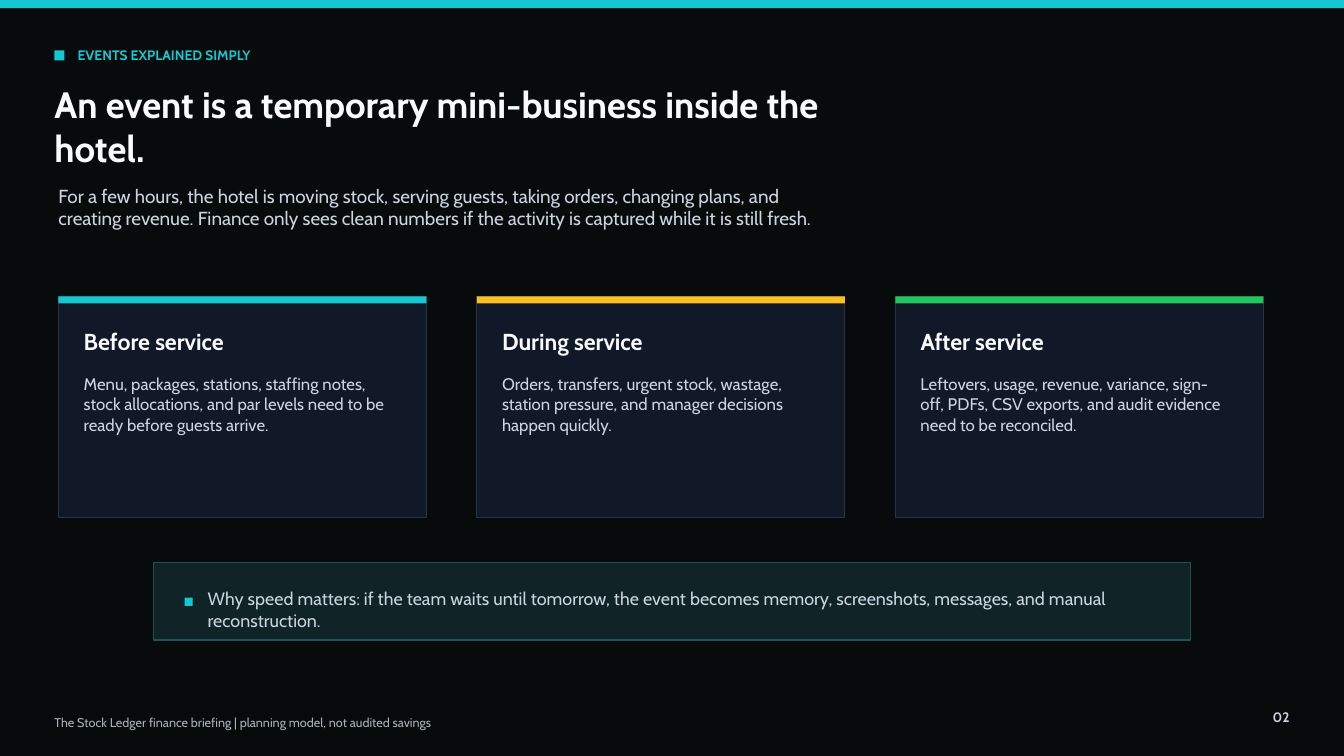
from dataclasses import dataclass

from pptx import Presentation
from pptx.dml.color import RGBColor
from pptx.enum.shapes import MSO_SHAPE
from pptx.enum.text import MSO_ANCHOR, MSO_AUTO_SIZE, PP_ALIGN
from pptx.util import Inches, Pt


@dataclass(frozen=True)
class Theme:
    font: str = "Cabin"
    page: str = "080B0B"
    footer: str = "070A0A"
    card: str = "111827"
    card_edge: str = "273443"
    callout: str = "102326"
    callout_edge: str = "1E5257"
    cyan: str = "17C7CF"
    amber: str = "FBBF24"
    green: str = "22C55E"
    white: str = "F8FAFC"
    soft: str = "CBD5E1"
    muted: str = "A7B2BF"
    title_size: float = 26.2
    heading_size: float = 16.5
    lead_size: float = 13.5
    callout_size: float = 12.8
    body_size: float = 12
    label_size: float = 9.8
    footer_size: float = 9


theme = Theme()
prs = Presentation()
prs.slide_width, prs.slide_height = Inches(13.33), Inches(7.5)
slide = prs.slides.add_slide(prs.slide_layouts[5])
slide.background.fill.solid()
slide.background.fill.fore_color.rgb = RGBColor.from_string(theme.page)


def add_panel(left, top, width, height, fill, edge=None):
    panel = slide.shapes.add_shape(
        MSO_SHAPE.RECTANGLE, Inches(left), Inches(top), Inches(width), Inches(height))
    panel.shadow.inherit = False
    panel.fill.solid()
    panel.fill.fore_color.rgb = RGBColor.from_string(fill)
    if edge:
        panel.line.color.rgb = RGBColor.from_string(edge)
        panel.line.width = Pt(0.75)
    else:
        panel.line.fill.background()


def add_text(text, left, top, width, height, size, color=theme.soft, bold=False,
             align=PP_ALIGN.LEFT, holder=None):
    """Write text in a new box, or in the given placeholder."""
    place = [Inches(length) for length in (left, top, width, height)]
    box = holder or slide.shapes.add_textbox(*place)
    box.left, box.top, box.width, box.height = place
    frame = box.text_frame
    frame.word_wrap = True
    frame.auto_size = MSO_AUTO_SIZE.NONE
    frame.vertical_anchor = MSO_ANCHOR.TOP
    frame.margin_left = frame.margin_right = frame.margin_top = frame.margin_bottom = 0
    frame.text = text
    paragraph = frame.paragraphs[0]
    paragraph.alignment = align
    paragraph.line_spacing = 1.0
    font = paragraph.runs[0].font
    font.name, font.size, font.bold = theme.font, Pt(size), bold
    font.color.rgb = RGBColor.from_string(color)


# Top bar and footer
add_panel(0, 0, 13.33, 0.08, theme.cyan)
add_panel(0, 6.83, 13.33, 0.67, theme.footer)
add_text("The Stock Ledger finance briefing | planning model, not audited savings",
         0.54, 7.09, 7.71, 0.19, theme.footer_size, theme.muted)
add_text("02", 12.27, 7.03, 0.52, 0.23, theme.label_size, bold=True, align=PP_ALIGN.RIGHT)

# Heading
add_panel(0.54, 0.5, 0.1, 0.1, theme.cyan)
add_text("EVENTS EXPLAINED SIMPLY", 0.77, 0.46, 5.42, 0.21,
         theme.label_size, theme.cyan, bold=True)
add_text("An event is a temporary mini-business inside the hotel.", 0.54, 0.81, 8.12, 1,
         theme.title_size, theme.white, bold=True, holder=slide.shapes.title)
add_text("For a few hours, the hotel is moving stock, serving guests, taking orders, "
         "changing plans, and creating revenue. Finance only sees clean numbers if the "
         "activity is captured while it is still fresh.",
         0.58, 1.83, 7.5, 0.6, theme.lead_size)

# Stage cards
stages = [
    ("Before service", theme.cyan,
     "Menu, packages, stations, staffing notes, stock allocations, and par levels "
     "need to be ready before guests arrive."),
    ("During service", theme.amber,
     "Orders, transfers, urgent stock, wastage, station pressure, and manager "
     "decisions happen quickly."),
    ("After service", theme.green,
     "Leftovers, usage, revenue, variance, sign-off, PDFs, CSV exports, and audit "
     "evidence need to be reconciled."),
]
card_top, card_width, card_gap = 2.94, 3.65, 0.5
for index, (stage, accent, detail) in enumerate(stages):
    card_left = 0.58 + index * (card_width + card_gap)
    add_panel(card_left, card_top, card_width, 2.19, theme.card, theme.card_edge)
    add_panel(card_left, card_top, card_width, 0.07, accent)
    add_text(stage, card_left + 0.25, card_top + 0.31, 3.15, 0.29,
             theme.heading_size, theme.white, bold=True)
    add_text(detail, card_left + 0.25, card_top + 0.77, 3.04, 1, theme.body_size)

# Callout
add_panel(1.52, 5.58, 10.29, 0.77, theme.callout, theme.callout_edge)
add_panel(1.83, 5.93, 0.08, 0.08, theme.cyan)
add_text("Why speed matters: if the team waits until tomorrow, the event becomes memory, "
         "screenshots, messages, and manual reconstruction.",
         2.06, 5.83, 9.15, 0.27, theme.callout_size)

prs.save("out.pptx")
